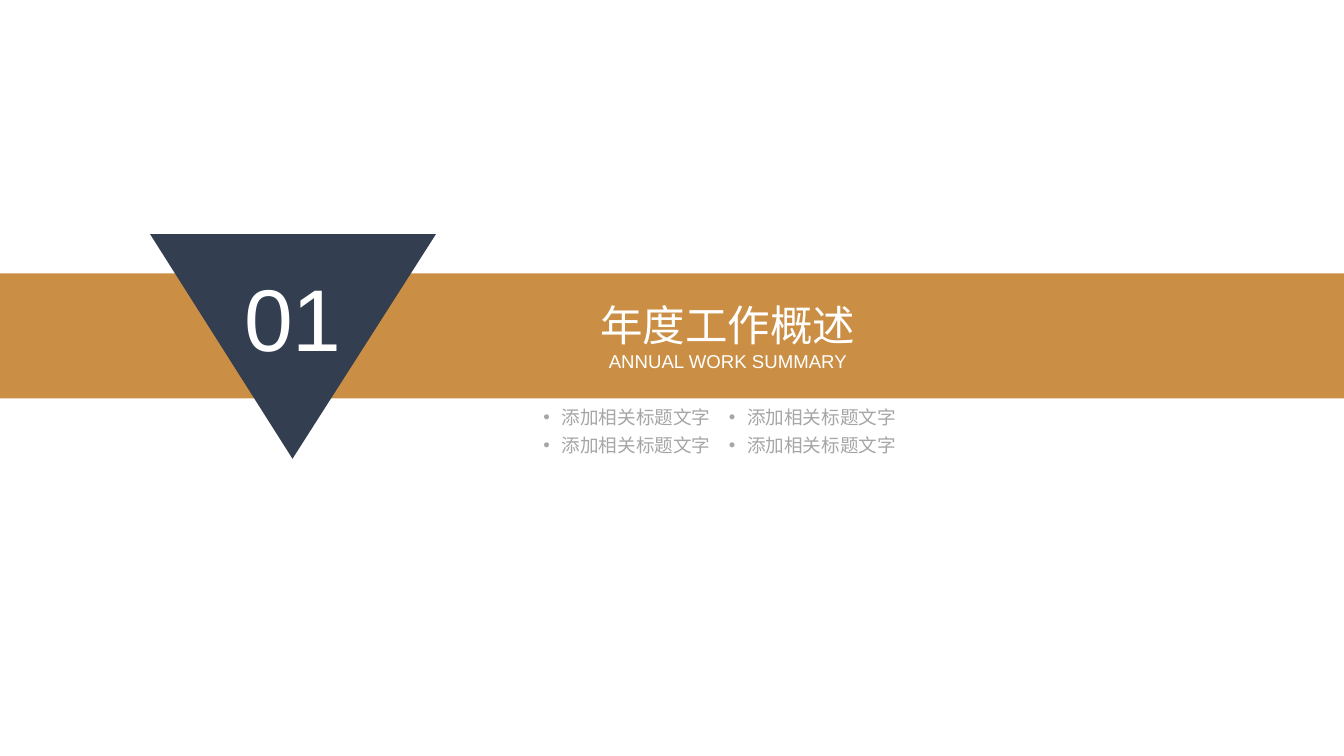
import pptx
import pptx.util
import pptx.dml.color
import pptx.enum.shapes
import pptx.enum.text
import pptx.oxml.ns
import lxml.etree

Inches = pptx.util.Inches
Pt = pptx.util.Pt
Anchor = pptx.enum.text.MSO_ANCHOR
Fit = pptx.enum.text.MSO_AUTO_SIZE

SIZE = (14.06, 7.91)
NUMBER = "01"
TITLE = [("年度工作概述", 32), ("ANNUAL WORK SUMMARY", 14)]
TOPICS = [
    ["添加相关标题文字", "添加相关标题文字"],
    ["添加相关标题文字", "添加相关标题文字"],
]
FONT = "Arial"
GOLD, NAVY, WHITE, GRAY = "CA8F45", "333F50", "FFFFFF", "A6A6A6"
BAND = (0, 2.86, SIZE[0], 1.31)
CORNERS = [(1.57, 2.45), (4.56, 2.45), (3.06, 4.8)]
HEAD = (6.23, 3.13, 2.77, 0.77)
GRID = (5.68, 4.25)
STEP = (1.94, 0.29)
CELL = (1.76, 0.24)
INDENT = 0.19


def color(code):
    return pptx.dml.color.RGBColor.from_string(code)


def paint(shape, code):
    shape.shadow.inherit = False
    shape.fill.solid()
    shape.fill.fore_color.rgb = color(code)
    shape.line.fill.background()


def write(shape, lines, code, insets=(0, 0, 0, 0), anchor=Anchor.MIDDLE, wrap=True):
    frame = shape.text_frame
    frame.auto_size = Fit.NONE
    frame.word_wrap = wrap
    frame.vertical_anchor = anchor
    (frame.margin_left, frame.margin_top,
     frame.margin_right, frame.margin_bottom) = map(Inches, insets)
    frame.text = "\n".join(text for text, size in lines)
    for para, (text, size) in zip(frame.paragraphs, lines):
        para.alignment = pptx.enum.text.PP_ALIGN.CENTER
        for run in para.runs:
            run.font.name = FONT
            run.font.size = Pt(size)
            run.font.color.rgb = color(code)


def bullet(para):
    props = para._p.get_or_add_pPr()
    props.set("marL", str(Inches(INDENT)))
    props.set("indent", str(-Inches(INDENT)))
    for tag, name, value in (("a:buFont", "typeface", FONT), ("a:buChar", "char", "•")):
        mark = lxml.etree.SubElement(props, pptx.oxml.ns.qn(tag))
        mark.set(name, value)


def main():
    deck = pptx.Presentation()
    deck.slide_width, deck.slide_height = map(Inches, SIZE)
    slide = deck.slides.add_slide(deck.slide_layouts[5])
    shapes = slide.shapes

    band = shapes.add_shape(pptx.enum.shapes.MSO_SHAPE.RECTANGLE, *map(Inches, BAND))
    paint(band, GOLD)

    points = [(Inches(x), Inches(y)) for x, y in CORNERS]
    pen = shapes.build_freeform(*points[0])
    pen.add_line_segments(points[1:], close=True)
    badge = pen.convert_to_shape()
    paint(badge, NAVY)
    write(badge, [(NUMBER, 66)], WHITE, (0.1, 0, 0.1, 0.62))

    title = shapes.title
    title.left, title.top, title.width, title.height = map(Inches, HEAD)
    write(title, TITLE, WHITE)
    shapes._spTree.append(title._element)

    for row, topics in enumerate(TOPICS):
        for col, topic in enumerate(topics):
            left = GRID[0] + col * STEP[0]
            top = GRID[1] + row * STEP[1]
            box = shapes.add_textbox(*map(Inches, (left, top, *CELL)))
            write(box, [(topic, 14)], GRAY, anchor=Anchor.TOP, wrap=False)
            bullet(box.text_frame.paragraphs[0])

    deck.save("out.pptx")


if __name__ == "__main__":
    main()
